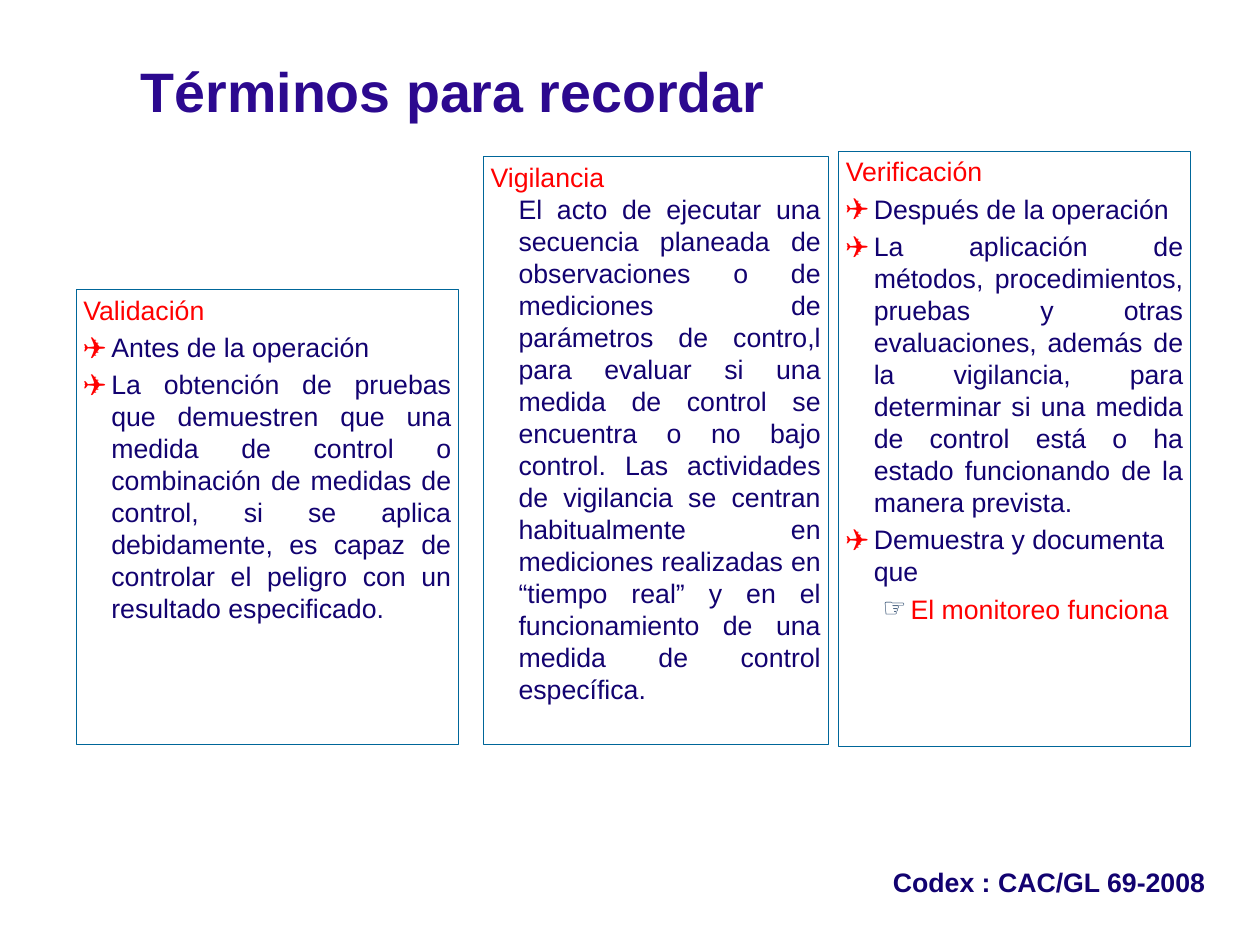
"""Build the slide that compares validation, monitoring and verification."""
import pptx
import pptx.dml.color
import pptx.enum.text
import pptx.util
import lxml.etree

Pt = pptx.util.Pt
Align = pptx.enum.text.PP_ALIGN
Anchor = pptx.enum.text.MSO_ANCHOR
NS = "http://schemas.openxmlformats.org/drawingml/2006/main"
RED, NAVY, PURPLE, BLUE, SLATE = "FF0000", "120270", "2C098F", "006699", "17375E"
STEP = 25.2
GAP = 4.8

KINDS = {
    "head": dict(color=RED),
    "left": dict(bullet="✈", tint=RED, scale=90, gap=GAP),
    "full": dict(bullet="✈", tint=RED, scale=90, gap=GAP, align=Align.JUSTIFY),
    "text": dict(hang=0, align=Align.JUSTIFY),
    "sub": dict(bullet="☞", tint=SLATE, level=1, inset=58.3, gap=GAP, color=RED),
    "note": dict(inset=0, hang=0, bold=True),
    "title": dict(inset=0, hang=0, bold=True, size=50, color=PURPLE),
}

PANELS = [
    ((68.4, 260.6, 344.2, 409), [
        ("head", "Validación"),
        ("full", "Antes de la operación"),
        ("full", "La obtención de pruebas que demuestren que una medida de control o "
                 "combinación de medidas de control, si se aplica debidamente, es capaz "
                 "de controlar el peligro con un resultado especificado."),
    ]),
    ((434.9, 141.1, 310.3, 528.5), [
        ("head", "Vigilancia"),
        ("text", "El acto de ejecutar una secuencia planeada de observaciones o de "
                 "mediciones de parámetros de contro,l para evaluar si una medida de "
                 "control se encuentra o no bajo control. Las actividades de vigilancia "
                 "se centran habitualmente en mediciones realizadas en “tiempo real” y "
                 "en el funcionamiento de una medida de control específica."),
    ]),
    ((754.6, 136.1, 316.8, 535.7), [
        ("head", "Verificación"),
        ("left", "Después de la operación"),
        ("full", "La aplicación de métodos, procedimientos, pruebas y otras "
                 "evaluaciones, además de la vigilancia, para determinar si una medida "
                 "de control está o ha estado funcionando de la manera prevista."),
        ("left", "Demuestra y documenta que"),
        ("sub", "El monitoreo funciona"),
    ]),
]


def paint(code):
    """Turn a hex string into a colour."""
    return pptx.dml.color.RGBColor.from_string(code)


def apply(item, values):
    """Set each named attribute on the item."""
    for name, value in values.items():
        setattr(item, name, value)


def mark(para, look):
    """Set the indent and bullet of a paragraph."""
    props = para._p.get_or_add_pPr()
    props.set("marL", str(Pt(look.get("inset", STEP))))
    props.set("indent", str(-Pt(look.get("hang", STEP))))

    def add(parent, tag, **values):
        """Add one drawing element."""
        return lxml.etree.SubElement(parent, f"{{{NS}}}{tag}", **values)

    if "bullet" not in look:
        add(props, "buNone")
        return
    add(add(props, "buClr"), "srgbClr", val=look["tint"])
    add(props, "buSzPct", val=str(look.get("scale", 100) * 1000))
    add(props, "buFont", typeface="Arial")
    add(props, "buChar", char=look["bullet"])


def write(para, kind, text):
    """Write one formatted paragraph."""
    look = KINDS[kind]
    para.text = text
    mark(para, look)
    apply(para, dict(level=look.get("level", 0), line_spacing=1.0,
                     alignment=look.get("align", Align.LEFT),
                     space_before=Pt(look.get("gap", 0)), space_after=Pt(0)))
    for font in [para.font] + [run.font for run in para.runs]:
        apply(font, dict(name="Arial", size=Pt(look.get("size", 24)),
                         bold=look.get("bold", False)))
        font.color.rgb = paint(look.get("color", NAVY))


def fill(shape, box, items, anchor=Anchor.TOP):
    """Place a placeholder and write its paragraphs."""
    apply(shape, dict(zip(("left", "top", "width", "height"), map(Pt, box))))
    frame = shape.text_frame
    apply(frame, dict(word_wrap=True, vertical_anchor=anchor,
                      auto_size=pptx.enum.text.MSO_AUTO_SIZE.NONE,
                      margin_left=Pt(6.6), margin_right=Pt(6.6),
                      margin_top=Pt(3.6), margin_bottom=Pt(3.6)))
    for row, (kind, text) in enumerate(items):
        write(frame.add_paragraph() if row else frame.paragraphs[0], kind, text)


def frame_in(shape):
    """Draw the thin blue border of a panel."""
    shape.line.color.rgb = paint(BLUE)
    shape.line.width = Pt(0.75)


def main():
    """Build and save the slide."""
    deck = pptx.Presentation()
    apply(deck, dict(slide_width=Pt(1134), slide_height=Pt(850.4)))
    slide = deck.slides.add_slide(deck.slide_layouts.get_by_name("Comparison"))
    title, *bodies = slide.placeholders
    fill(title, (120.2, 5.8, 786.2, 108.7),
         [("title", "Términos para recordar")], Anchor.BOTTOM)
    for body, (box, items) in zip(bodies, PANELS):
        fill(body, box, items)
        frame_in(body)
    fill(bodies[-1], (797, 775.5, 320, 36), [("note", "Codex : CAC/GL 69-2008")])
    deck.save("out.pptx")


if __name__ == "__main__":
    main()
